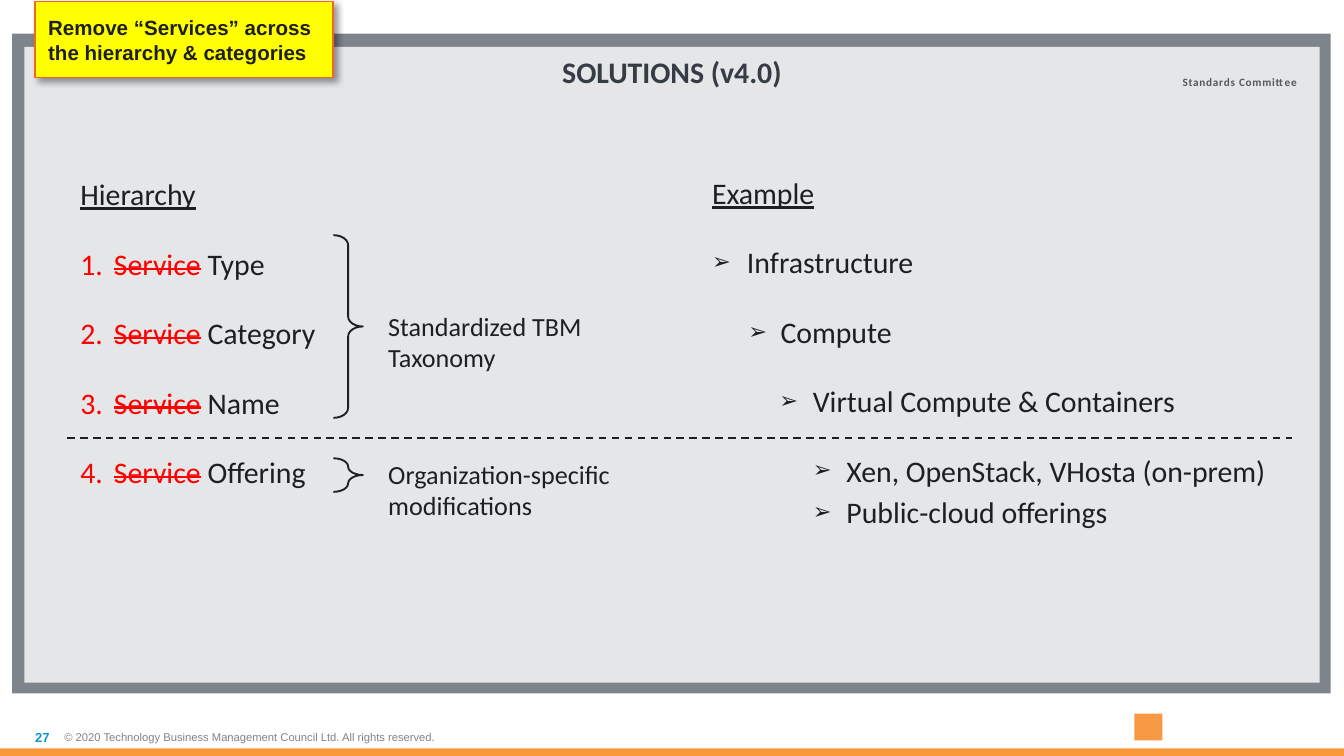
from dataclasses import dataclass

from lxml.etree import SubElement
from pptx import Presentation
from pptx.dml.color import RGBColor
from pptx.enum.dml import MSO_LINE
from pptx.enum.shapes import MSO_CONNECTOR, MSO_SHAPE
from pptx.enum.text import MSO_ANCHOR, MSO_AUTO_SIZE, PP_ALIGN
from pptx.oxml.ns import qn
from pptx.util import Pt


@dataclass(frozen=True)
class Theme:
    ink: str = "1E1F21"
    title: str = "353C45"
    tag: str = "53565C"
    grey: str = "7E848B"
    panel: str = "E5E6E8"
    orange: str = "F89838"
    mark: str = "F89946"
    edge: str = "F26724"
    yellow: str = "FFFF00"
    red: str = "FF0000"
    blue: str = "0D96C9"
    body_font: str = "Calibri"
    label_font: str = "Arial"
    body_size: float = 16
    note_size: float = 14
    callout_size: float = 11
    number_size: float = 7
    small_size: float = 6


THEME = Theme()


def color(code):
    return RGBColor.from_string(code)


def add_span(para, text, size, code=THEME.ink, font=THEME.body_font, bold=False):
    span = para.add_run()
    span.text = text
    span.font.size = Pt(size)
    span.font.name = font
    span.font.bold = bold
    span.font.color.rgb = color(code)
    return span


def set_frame(frame, inset=(7.2, 3.6), anchor=MSO_ANCHOR.TOP, wrap=True):
    frame.word_wrap = wrap
    frame.auto_size = MSO_AUTO_SIZE.NONE
    frame.vertical_anchor = anchor
    frame.margin_left = frame.margin_right = Pt(inset[0])
    frame.margin_top = frame.margin_bottom = Pt(inset[1])
    return frame


def add_text(page, place, **layout):
    box = page.shapes.add_textbox(*map(Pt, place))
    return set_frame(box.text_frame, **layout)


def add_shape(page, kind, place, fill=None, line=None, width=1):
    shape = page.shapes.add_shape(kind, *map(Pt, place))
    shape.shadow.inherit = False
    if fill:
        shape.fill.solid()
        shape.fill.fore_color.rgb = color(fill)
    else:
        shape.fill.background()
    if line:
        shape.line.color.rgb = color(line)
        shape.line.width = Pt(width)
    else:
        shape.line.fill.background()
    return shape


def add_rule(page, left, right, top):
    rule = page.shapes.add_connector(
        MSO_CONNECTOR.STRAIGHT, Pt(left), Pt(top), Pt(right), Pt(top))
    rule.line.color.rgb = color(THEME.ink)
    rule.line.width = Pt(1)
    rule.line.dash_style = MSO_LINE.DASH
    SubElement(rule.element.spPr, qn("a:effectLst"))


def add_item(frame, indent, hanging, space, arrow=False):
    """Add a hanging paragraph, numbered or with an arrow bullet."""
    para = frame.add_paragraph()
    props = para._p.get_or_add_pPr()
    props.set("marL", str(Pt(indent)))
    props.set("indent", str(Pt(-hanging)))
    if arrow:
        SubElement(props, qn("a:buSzPct"), val="75000")
        SubElement(props, qn("a:buFont"), typeface=THEME.label_font)
        SubElement(props, qn("a:buChar"), char="➢")
    else:
        SubElement(props, qn("a:buFont"), typeface="+mj-lt")
        SubElement(props, qn("a:buAutoNum"), type="arabicPeriod")
    para.space_before = Pt(space)
    return para


def add_heading(frame, text):
    span = add_span(frame.paragraphs[0], text, THEME.body_size)
    span.font.underline = True


def add_hierarchy(page):
    frame = add_text(page, (36, 90.7, 167.8, 217.4))
    add_heading(frame, "Hierarchy")
    for level in ("Type", "Category", "Name", "Offering"):
        para = add_item(frame, 18, 18, 18)
        struck = add_span(para, "Service", THEME.body_size, THEME.red)
        struck.font._element.set("strike", "sngStrike")
        add_span(para, " " + level, THEME.body_size)


def add_example(page):
    frame = add_text(page, (374.4, 90, 321.8, 199.4))
    add_heading(frame, "Example")
    items = (
        (0, 18.7, 18.7, 18, "Infrastructure"),
        (1, 36.7, 17.3, 18, "Compute"),
        (2, 54, 18, 18, "Virtual Compute & Containers"),
        (3, 72, 18, 18, "Xen, OpenStack, VHosta (on-prem)"),
        (3, 72, 18, 3, "Public-cloud offerings"),
    )
    for level, indent, hanging, space, text in items:
        para = add_item(frame, indent, hanging, space, arrow=True)
        para.level = level
        add_span(para, text, THEME.body_size)


def add_braced_note(page, brace_top, brace_height, note_top, text):
    brace = add_shape(page, MSO_SHAPE.RIGHT_BRACE,
                      (178.6, brace_top, 15.8, brace_height), line=THEME.ink)
    brace.adjustments[0] = 0.338
    brace.adjustments[1] = 0.5
    frame = add_text(page, (200.9, note_top, 173.5, 24.5))
    add_span(frame.paragraphs[0], text, THEME.note_size)


def add_callout(page, lines):
    callout = add_shape(page, MSO_SHAPE.RECTANGLE, (18.7, 0.7, 159.8, 41),
                        THEME.yellow, THEME.edge, 0.75)
    effects = callout.element.spPr.find(qn("a:effectLst"))
    shadow = SubElement(effects, qn("a:outerShdw"), blurRad=str(Pt(4)),
                        dist=str(Pt(3)), dir="2700000", algn="tl", rotWithShape="0")
    black = SubElement(shadow, qn("a:srgbClr"), val="000000")
    SubElement(black, qn("a:alpha"), val="40000")
    frame = set_frame(callout.text_frame, (7.2, 7.2), MSO_ANCHOR.MIDDLE, wrap=False)
    for index, text in enumerate(lines):
        para = frame.add_paragraph() if index else frame.paragraphs[0]
        para.alignment = PP_ALIGN.LEFT
        add_span(para, text, THEME.callout_size, font=THEME.label_font, bold=True)


def add_title(page, text):
    title = page.shapes.title
    title.left, title.top, title.width, title.height = map(Pt, (13, 25.2, 694, 27))
    title.element.getparent().append(title.element)  # in front of the panel
    para = set_frame(title.text_frame).paragraphs[0]
    para.alignment = PP_ALIGN.CENTER
    add_span(para, text, THEME.body_size, THEME.title, bold=True)


def add_footer(page):
    layout = {"inset": (0, 0), "anchor": MSO_ANCHOR.MIDDLE}
    notice = add_text(page, (34.5, 384.5, 242, 21), **layout).paragraphs[0]
    add_span(notice, "© 2020 Technology Business Management Council Ltd. All rights reserved.",
             THEME.small_size, THEME.grey, THEME.label_font)
    number = add_text(page, (0, 384.5, 26.6, 21), **layout).paragraphs[0]
    number.alignment = PP_ALIGN.RIGHT
    add_span(number, "27", THEME.number_size, THEME.blue, THEME.label_font, True)
    add_shape(page, MSO_SHAPE.RECTANGLE, (607.7, 382.3, 15, 14.4), THEME.mark)
    add_shape(page, MSO_SHAPE.RECTANGLE, (0, 401, 720, 4), THEME.orange)


def add_tag(page, text):
    frame = add_text(page, (633.6, 40.3, 62.6, 7.2), inset=(0, 0), wrap=False)
    span = add_span(frame.paragraphs[0], text, THEME.small_size, THEME.tag, bold=True)
    span.font._element.set("spc", "40")


def main():
    deck = Presentation()
    deck.slide_width, deck.slide_height = Pt(720), Pt(405)
    page = deck.slides.add_slide(deck.slide_layouts[5])
    add_footer(page)
    add_shape(page, MSO_SHAPE.RECTANGLE, (6.5, 18, 706.3, 353.5), THEME.grey)
    add_shape(page, MSO_SHAPE.RECTANGLE, (13, 25.2, 694, 340.6), THEME.panel)
    add_title(page, "SOLUTIONS (v4.0)")
    add_tag(page, "Standards Committee")
    add_hierarchy(page)
    add_rule(page, 36, 692, 234.7)
    add_callout(page, ("Remove “Services” across", "the hierarchy & categories"))
    add_braced_note(page, 126, 97.9, 162.7, "Standardized TBM Taxonomy")
    add_braced_note(page, 245.5, 18, 241.9, "Organization-specific modifications")
    add_example(page)
    deck.save("out.pptx")


if __name__ == "__main__":
    main()
